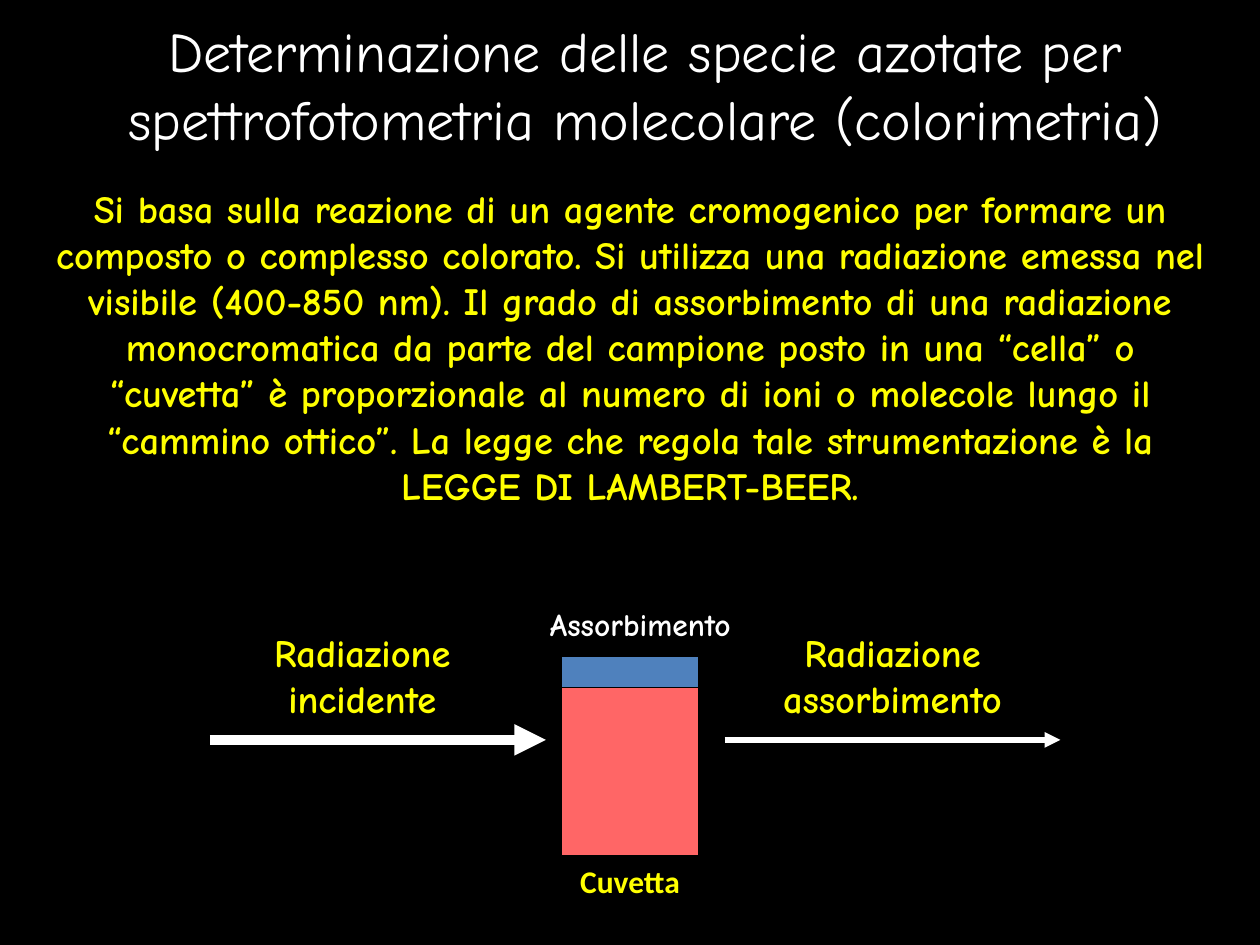
from lxml import etree
from pptx import Presentation
from pptx.dml.color import RGBColor
from pptx.enum.shapes import MSO_CONNECTOR, MSO_SHAPE
from pptx.enum.text import MSO_ANCHOR, MSO_AUTO_SIZE, PP_ALIGN
from pptx.oxml.ns import qn
from pptx.util import Pt

STRAIGHT = MSO_CONNECTOR.STRAIGHT
RECTANGLE = MSO_SHAPE.RECTANGLE
TOP = MSO_ANCHOR.TOP
NO_AUTOFIT = MSO_AUTO_SIZE.NONE
CENTER = PP_ALIGN.CENTER

BLACK = RGBColor(0x00, 0x00, 0x00)
WHITE = RGBColor(0xFF, 0xFF, 0xFF)
YELLOW = RGBColor(0xFF, 0xFF, 0x00)
BLUE = RGBColor(0x4F, 0x81, 0xBD)
RED = RGBColor(0xFF, 0x66, 0x66)

TITLE = "Determinazione delle specie azotate per spettrofotometria molecolare (colorimetria)"
DESCRIPTION = (
    "Si basa sulla reazione di un agente cromogenico per formare un composto o complesso "
    "colorato. Si utilizza una radiazione emessa nel visibile (400-850 nm). Il grado di "
    "assorbimento di una radiazione monocromatica da parte del campione posto in una “cella” "
    "o “cuvetta” è proporzionale al numero di ioni o molecole lungo il “cammino ottico”. "
    "La legge che regola tale strumentazione è la LEGGE DI LAMBERT-BEER."
)

BEAM_Y = 422.8
BEAM_LENGTH = 192
LABEL_TOP = 356
LABEL_HEIGHT = 60
CUVETTE_LEFT = 321
CUVETTE_WIDTH = 78
CUVETTE_BOTTOM = 489


def set_text(shape, text, size, color=YELLOW, bold=True, font="Comic Neue", wrap=True):
    frame = shape.text_frame
    frame.auto_size = NO_AUTOFIT
    frame.word_wrap = wrap
    frame.vertical_anchor = TOP
    paragraph = frame.paragraphs[0]
    paragraph.alignment = CENTER
    run = paragraph.add_run()
    run.text = text
    run.font.color.rgb = color
    formats = {"name": font, "size": Pt(size), "bold": bold}
    for name, value in formats.items():
        setattr(run.font, name, value)


def add_title(slide, text, left, top, width, height):
    title = slide.shapes.title
    position = {"left": left, "top": top, "width": width, "height": height}
    for name, value in position.items():
        setattr(title, name, Pt(value))
    set_text(title, text, 32, WHITE, bold=False)


def add_text(slide, text, left, top, width, height, size, **formats):
    box = slide.shapes.add_textbox(Pt(left), Pt(top), Pt(width), Pt(height))
    set_text(box, text, size, **formats)


def add_cuvette_layer(slide, top, color):
    shape = slide.shapes.add_shape(
        RECTANGLE, Pt(CUVETTE_LEFT), Pt(top), Pt(CUVETTE_WIDTH), Pt(CUVETTE_BOTTOM - top)
    )
    shape.shadow.inherit = False
    shape.fill.solid()
    shape.fill.fore_color.rgb = color
    shape.line.color.rgb = BLACK
    shape.line.width = Pt(0.75)


def add_beam(slide, left, weight):
    beam = slide.shapes.add_connector(
        STRAIGHT, Pt(left), Pt(BEAM_Y), Pt(left + BEAM_LENGTH), Pt(BEAM_Y)
    )
    beam.line.color.rgb = WHITE
    beam.line.width = Pt(weight)
    properties = beam.line._get_or_add_ln()
    etree.SubElement(properties, qn("a:tailEnd"), type="triangle")
    etree.SubElement(properties.getparent(), qn("a:effectLst"))


def main():
    presentation = Presentation()
    presentation.slide_width = Pt(720)
    presentation.slide_height = Pt(540)
    slide = presentation.slides.add_slide(presentation.slide_layouts[5])
    slide.background.fill.solid()
    slide.background.fill.fore_color.rgb = BLACK

    add_title(slide, TITLE, 30, 6, 678, 85)
    add_text(slide, DESCRIPTION, 24, 102, 672, 194, 22)

    add_cuvette_layer(slide, 375, BLUE)
    add_cuvette_layer(slide, 393, RED)
    add_text(slide, "Cuvetta", 300, CUVETTE_BOTTOM, 120, 41, 18, font="Calibri")

    beams = [
        (120, 6, "Radiazione incidente", 132, 150),
        (414, 3, "Radiazione assorbimento", 426, 168),
    ]
    for beam_left, weight, label, label_left, label_width in beams:
        add_beam(slide, beam_left, weight)
        add_text(slide, label, label_left, LABEL_TOP, label_width, LABEL_HEIGHT, 22)

    add_text(slide, "Assorbimento", 304, 342, 124, 29, 18, color=WHITE, wrap=False)
    presentation.save("out.pptx")


if __name__ == "__main__":
    main()
